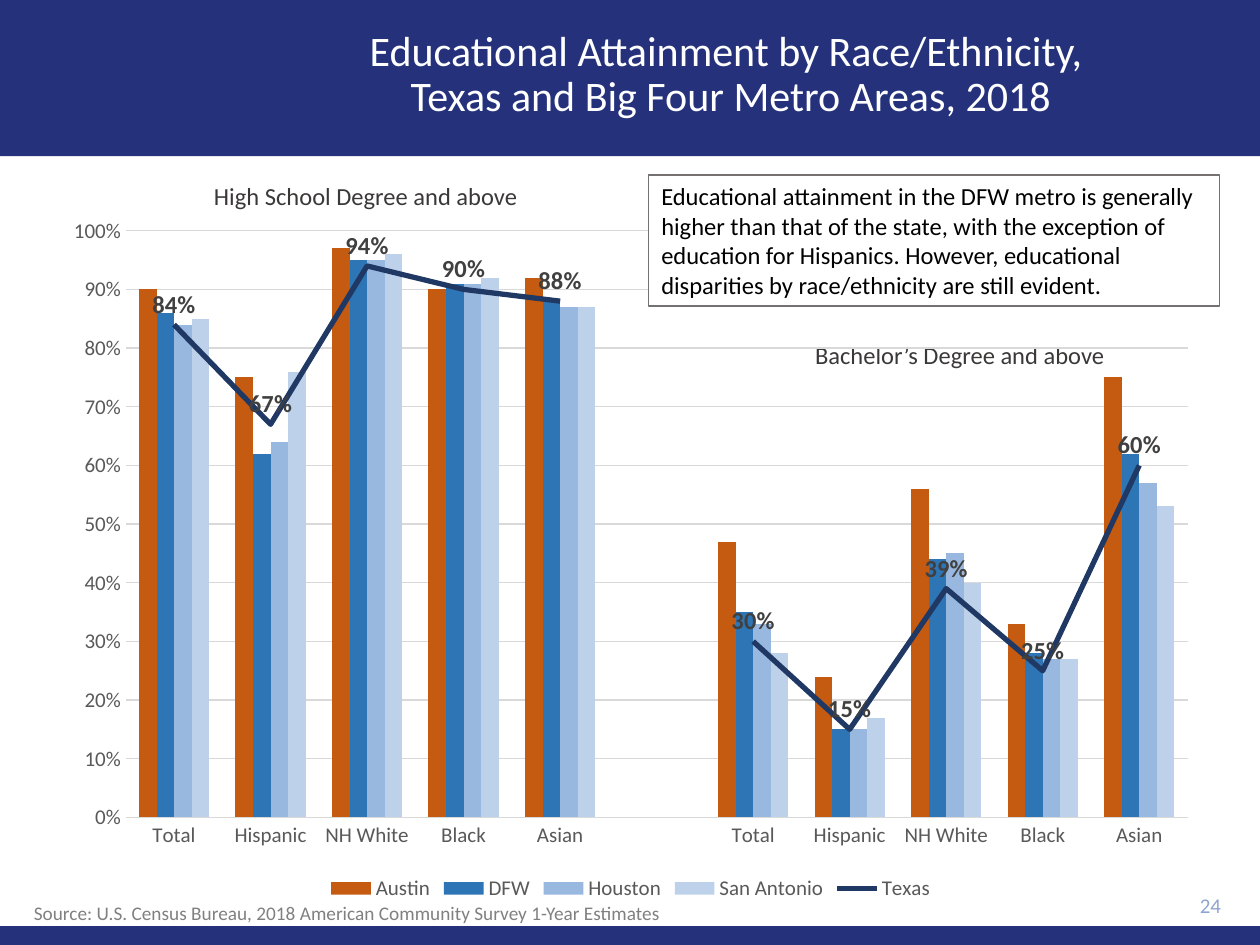
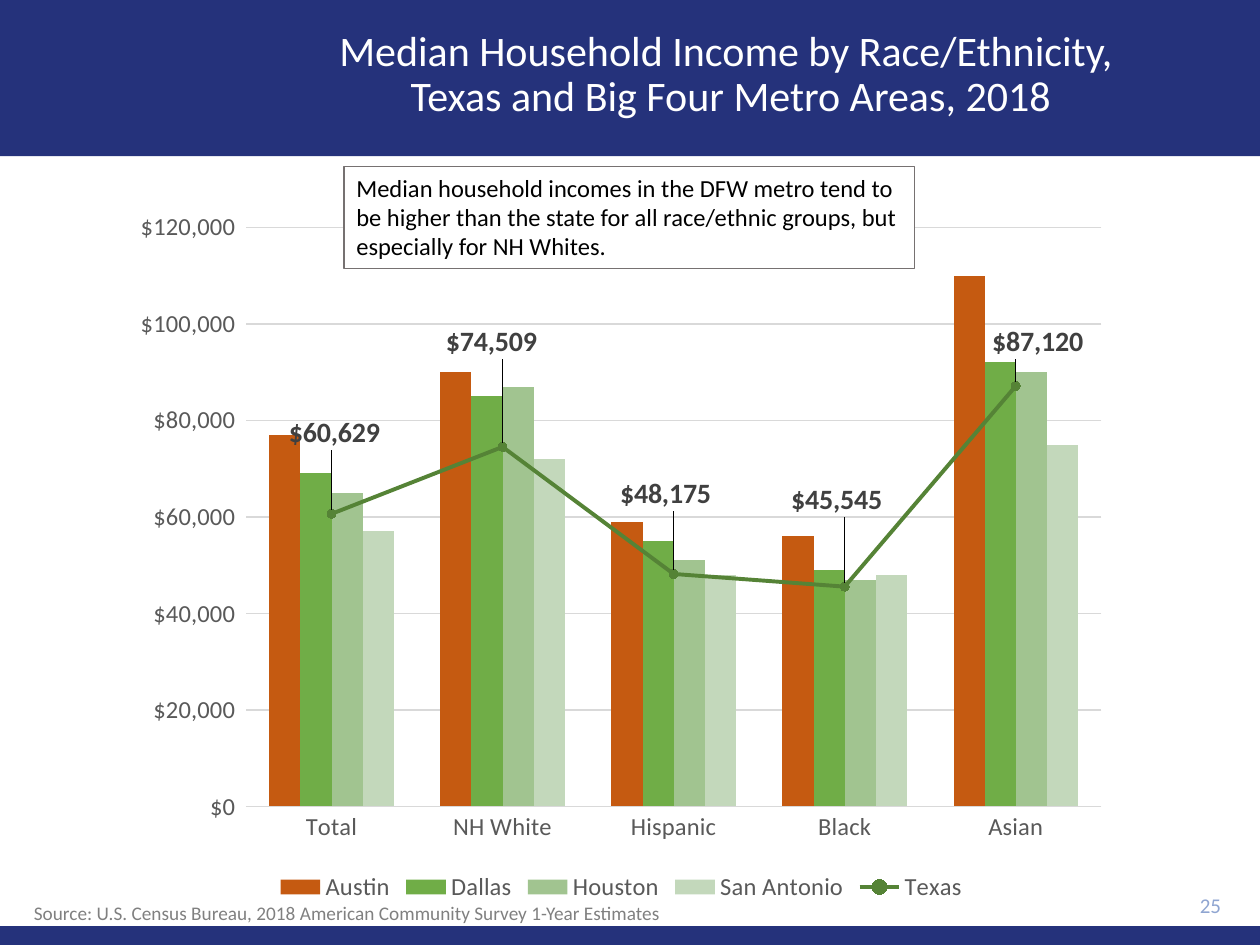
import lxml.etree
import pptx
import pptx.chart.data
import pptx.dml.color
import pptx.enum.chart
import pptx.enum.shapes
import pptx.enum.text
import pptx.oxml
import pptx.oxml.ns
import pptx.util

Inches = pptx.util.Inches
Pt = pptx.util.Pt
RGBColor = pptx.dml.color.RGBColor
qn = pptx.oxml.ns.qn
ALIGN = pptx.enum.text.PP_ALIGN
ANCHOR = pptx.enum.text.MSO_ANCHOR
AUTO_SIZE = pptx.enum.text.MSO_AUTO_SIZE
LABEL_ABOVE = pptx.enum.chart.XL_LABEL_POSITION.ABOVE

FONT = "Calibri"
NAVY = RGBColor(0x25, 0x32, 0x7B)
WHITE = RGBColor(0xFF, 0xFF, 0xFF)
BLACK = RGBColor(0, 0, 0)
PAGE_NUMBER = RGBColor(0x8F, 0xA5, 0xD1)
SOURCE_GRAY = RGBColor(0x80, 0x80, 0x80)
HEADING_GRAY = RGBColor(0x3B, 0x38, 0x38)
BORDER_GRAY = RGBColor(0x76, 0x71, 0x71)
AXIS_GRAY = RGBColor(0x59, 0x59, 0x59)
GRID_GRAY = RGBColor(0xD9, 0xD9, 0xD9)
LABEL_GRAY = RGBColor(0x40, 0x40, 0x40)
ORANGE = RGBColor(0xC5, 0x5A, 0x11)
BLUES = [RGBColor(0x2E, 0x75, 0xB6), RGBColor(0x98, 0xB8, 0xE0), RGBColor(0xBE, 0xD1, 0xEA)]
GREENS = [RGBColor(0x70, 0xAD, 0x47), RGBColor(0xA1, 0xC4, 0x90), RGBColor(0xC3, 0xD8, 0xBB)]
DARK_BLUE = RGBColor(0x20, 0x38, 0x64)
DARK_GREEN = RGBColor(0x55, 0x83, 0x36)

TITLE_SIZE = 24
SOURCE = "Source: U.S. Census Bureau, 2018 American Community Survey 1-Year Estimates"
PERCENT = "0%"
DOLLARS = '"$"#,##0_);[Red]\\("$"#,##0\\)'
TITLE_BOX = (1.7, 0.1, 8.2, 1)
BANDS = [(0, 0, 10, 1.24), (0, 7.35, 10, 0.15)]


def inches(box):
    return [Inches(length) for length in box]


def set_font(font, size, color, bold=False):
    font.name = FONT
    font.size = Pt(size)
    font.color.rgb = color
    font.bold = bold


def write_text(frame, text, size=14, color=BLACK, align=ALIGN.LEFT,
               anchor=ANCHOR.TOP, wrap=True, auto_size=AUTO_SIZE.NONE, spacing=None):
    frame.word_wrap = wrap
    frame.auto_size = auto_size
    frame.vertical_anchor = anchor
    para = frame.paragraphs[0]
    para.text = text
    para.alignment = align
    if spacing:
        para.line_spacing = spacing
    for span in para.runs:
        set_font(span.font, size, color)


def add_text(page, box, text, **text_format):
    frame = page.shapes.add_textbox(*inches(box)).text_frame
    write_text(frame, text, **text_format)


def add_rectangle(page, box, fill):
    shape = page.shapes.add_shape(pptx.enum.shapes.MSO_SHAPE.RECTANGLE, *inches(box))
    shape.shadow.inherit = False
    shape.fill.solid()
    shape.fill.fore_color.rgb = fill
    shape.line.fill.background()
    return shape


def prepare_layout(deck, layout):
    """Set the title's place and size for every page that uses the layout."""
    style = deck.slide_master.element.find(
        ".//" + "/".join(qn(tag) for tag in ("p:titleStyle", "a:lvl1pPr", "a:defRPr")))
    style.set("sz", str(TITLE_SIZE * 100))
    title = layout.placeholders[0]
    title.left, title.top, title.width, title.height = inches(TITLE_BOX)


def add_layout_bands(page):
    """Draw the bands and hand them to the layout, behind its placeholders."""
    for index, box in enumerate(BANDS):
        band = add_rectangle(page, box, NAVY).element
        band.nvSpPr.cNvPr.id = 20 + index
        page.slide_layout.shapes.element.insert(2 + index, band)


def add_page(deck, layout, title, number):
    page = deck.slides.add_slide(layout)
    write_text(page.shapes.title.text_frame, title, size=TITLE_SIZE, color=WHITE,
               align=ALIGN.CENTER, anchor=ANCHOR.MIDDLE, spacing=0.9)
    add_text(page, (8.9, 7.01, 0.89, 0.34), str(number), size=12, color=PAGE_NUMBER,
             align=ALIGN.RIGHT, anchor=ANCHOR.MIDDLE)
    add_text(page, (0.17, 7.1, 5.24, 0.29), SOURCE, size=11, color=SOURCE_GRAY,
             wrap=False, auto_size=AUTO_SIZE.SHAPE_TO_FIT_TEXT)
    return page


def add_heading(page, box, text):
    add_text(page, box, text, color=HEADING_GRAY, wrap=False,
             auto_size=AUTO_SIZE.SHAPE_TO_FIT_TEXT)


def add_callout(page, box, text):
    callout = add_rectangle(page, box, WHITE)
    callout.line.color.rgb = BORDER_GRAY
    callout.line.width = Pt(0.75)
    write_text(callout.text_frame, text, auto_size=AUTO_SIZE.SHAPE_TO_FIT_TEXT)


def chart_layout(inner=False, **fractions):
    """Make a manual chart layout from fractions of the chart's size."""
    layout = lxml.etree.Element(qn("c:layout"))
    manual = lxml.etree.SubElement(layout, qn("c:manualLayout"))
    settings = dict(fractions)
    if inner:
        settings = {"layoutTarget": "inner", "xMode": "edge", "yMode": "edge", **fractions}
    for name, value in settings.items():
        lxml.etree.SubElement(manual, qn("c:" + name)).set("val", str(value))
    return layout


def no_fill():
    return pptx.oxml.parse_xml(
        f"<c:spPr {pptx.oxml.ns.nsdecls('c', 'a')}>"
        "<a:noFill/><a:ln><a:noFill/></a:ln></c:spPr>")


def move_last_series_to_line(chart):
    """Turn the last column series into a line on the same axes."""
    columns = chart.plots[0]
    bar_chart = columns.series[-1]._element.getparent()
    series = bar_chart.findall(qn("c:ser"))[-1]
    for invert in series.findall(qn("c:invertIfNegative")):
        series.remove(invert)
    line_chart = pptx.oxml.parse_xml(
        f"<c:lineChart {pptx.oxml.ns.nsdecls('c')}><c:grouping val='standard'/>"
        "<c:varyColors val='0'/><c:marker val='1'/></c:lineChart>")
    line_chart.insert(2, series)
    for axis in bar_chart.findall(qn("c:axId")):
        lxml.etree.SubElement(line_chart, qn("c:axId")).set("val", axis.get("val"))
    bar_chart.addnext(line_chart)
    return chart.plots[1].series[0]


def format_axes(chart, size, number_format, maximum, step):
    category, value = chart.category_axis, chart.value_axis
    for axis in (category, value):
        axis.major_tick_mark = axis.minor_tick_mark = pptx.enum.chart.XL_TICK_MARK.NONE
        set_font(axis.tick_labels.font, size, AXIS_GRAY)
    value.has_major_gridlines = True
    for line in (category.format.line, value.major_gridlines.format.line):
        line.color.rgb = GRID_GRAY
        line.width = Pt(0.75)
    value.format.line.fill.background()
    value.minimum_scale, value.maximum_scale, value.major_unit = 0, maximum, step
    value.tick_labels.number_format = number_format
    value.tick_labels.number_format_is_linked = False


def format_line(line, color, width, marker):
    line.smooth = False
    line.format.line.color.rgb = color
    line.format.line.width = Pt(width)
    style = pptx.enum.chart.XL_MARKER_STYLE
    line.marker.style = style.CIRCLE if marker else style.NONE
    if marker:
        line.marker.size = 5
        line.marker.format.fill.solid()
        line.marker.format.fill.fore_color.rgb = color
        line.marker.format.line.color.rgb = color


def label_line(line, size, number_format, offsets):
    labels = line.data_labels
    labels.show_value = True
    labels.position = LABEL_ABOVE
    labels.number_format = number_format
    labels.number_format_is_linked = False
    set_font(labels.font, size, LABEL_GRAY, bold=True)
    for index, (x, y) in enumerate(offsets):
        label = line.points[index].data_label
        label.position = LABEL_ABOVE
        set_font(label.font, size, LABEL_GRAY, bold=True)
        entry = labels._element.findall(qn("c:dLbl"))[index]
        entry.insert(1, chart_layout(x=x, y=y))


def add_metro_chart(page, box, categories, series, colors, line_color, plot_box, size,
                    number_format, maximum, step, line_width, marker=False, offsets=()):
    data = pptx.chart.data.CategoryChartData(number_format=number_format)
    data.categories = categories
    for name, values in series.items():
        data.add_series(name, values)
    chart = page.shapes.add_chart(
        pptx.enum.chart.XL_CHART_TYPE.COLUMN_CLUSTERED, *inches(box), data).chart
    set_font(chart.font, size, BLACK)
    chart.has_title = False
    chart.has_legend = True
    chart.legend.position = pptx.enum.chart.XL_LEGEND_POSITION.BOTTOM
    chart.legend.include_in_layout = False
    set_font(chart.legend.font, size, AXIS_GRAY)
    format_axes(chart, size, number_format, maximum, step)

    line = move_last_series_to_line(chart)
    columns = chart.plots[0]
    columns.gap_width, columns.overlap = 150, 0
    columns.vary_by_categories = False
    for column, color in zip(columns.series, colors):
        column.format.fill.solid()
        column.format.fill.fore_color.rgb = color
    format_line(line, line_color, line_width, marker)
    label_line(line, size + 2, number_format, offsets)

    chart_part = chart.element.find(qn("c:chart"))
    chart_part.addnext(no_fill())
    plot_area = chart_part.find(qn("c:plotArea"))
    for old_layout in plot_area.findall(qn("c:layout")):
        plot_area.remove(old_layout)
    plot_area.insert(0, chart_layout(inner=True, **dict(zip("xywh", plot_box))))
    plot_area.append(no_fill())


def fill_education_page(page):
    add_heading(page, (1.6, 1.39, 2.63, 0.34), "High School Degree and above")
    add_heading(page, (6.37, 2.65, 2.52, 0.34), "Bachelor’s Degree and above")
    groups = ["Total", "Hispanic", "NH White", "Black", "Asian"]
    series = {
        "Austin": [0.9, 0.75, 0.97, 0.9, 0.92, None, 0.47, 0.24, 0.56, 0.33, 0.75],
        "DFW": [0.86, 0.62, 0.95, 0.91, 0.88, None, 0.35, 0.15, 0.44, 0.28, 0.62],
        "Houston": [0.84, 0.64, 0.95, 0.91, 0.87, None, 0.33, 0.15, 0.45, 0.27, 0.57],
        "San Antonio": [0.85, 0.76, 0.96, 0.92, 0.87, None, 0.28, 0.17, 0.4, 0.27, 0.53],
        "Texas": [0.84, 0.67, 0.94, 0.9, 0.88, None, 0.3, 0.15, 0.39, 0.25, 0.6],
    }
    add_metro_chart(page, (0.4, 1.62, 9.21, 5.57), groups + [""] + groups, series,
                    [ORANGE] + BLUES, DARK_BLUE, plot_box=(0.065, 0.038, 0.915, 0.836),
                    size=12, number_format=PERCENT, maximum=1, step=0.1, line_width=3)
    add_callout(page, (5.15, 1.39, 4.53, 1.04),
                "Educational attainment in the DFW metro is generally higher than that of the "
                "state, with the exception of education for Hispanics. However, educational "
                "disparities by race/ethnicity are still evident.")


def fill_income_page(page):
    series = {
        "Austin": [77000, 90000, 59000, 56000, 110000],
        "Dallas": [69000, 85000, 55000, 49000, 92000],
        "Houston": [65000, 87000, 51000, 47000, 90000],
        "San Antonio": [57000, 72000, 48000, 48000, 75000],
        "Texas": [60629, 74509, 48175, 45545, 87120],
    }
    offsets = [(0.006, -0.076), (-0.008, -0.11), (-0.005, -0.075),
               (-0.005, -0.085), (0.025, -0.025)]
    add_metro_chart(page, (0.96, 1.58, 7.94, 5.62),
                    ["Total", "NH White", "Hispanic", "Black", "Asian"], series,
                    [ORANGE] + GREENS, DARK_GREEN, plot_box=(0.125, 0.04, 0.855, 0.818),
                    size=14, number_format=DOLLARS, maximum=120000, step=20000,
                    line_width=2.25, marker=True, offsets=offsets)
    add_callout(page, (2.73, 1.32, 4.53, 0.81),
                "Median household incomes in the DFW metro tend to be higher than the state "
                "for all race/ethnic groups, but especially for NH Whites.")


def main():
    deck = pptx.Presentation()
    deck.slide_width, deck.slide_height = Inches(10), Inches(7.5)
    layout = deck.slide_layouts.get_by_name("Title Only")
    prepare_layout(deck, layout)
    area = "Texas and Big Four Metro Areas, 2018"
    education = add_page(deck, layout,
                         f"Educational Attainment by Race/Ethnicity, \n{area}", 24)
    add_layout_bands(education)
    fill_education_page(education)
    income = add_page(deck, layout, f"Median Household Income by Race/Ethnicity, \n{area}", 25)
    fill_income_page(income)
    deck.save("out.pptx")


if __name__ == "__main__":
    main()
